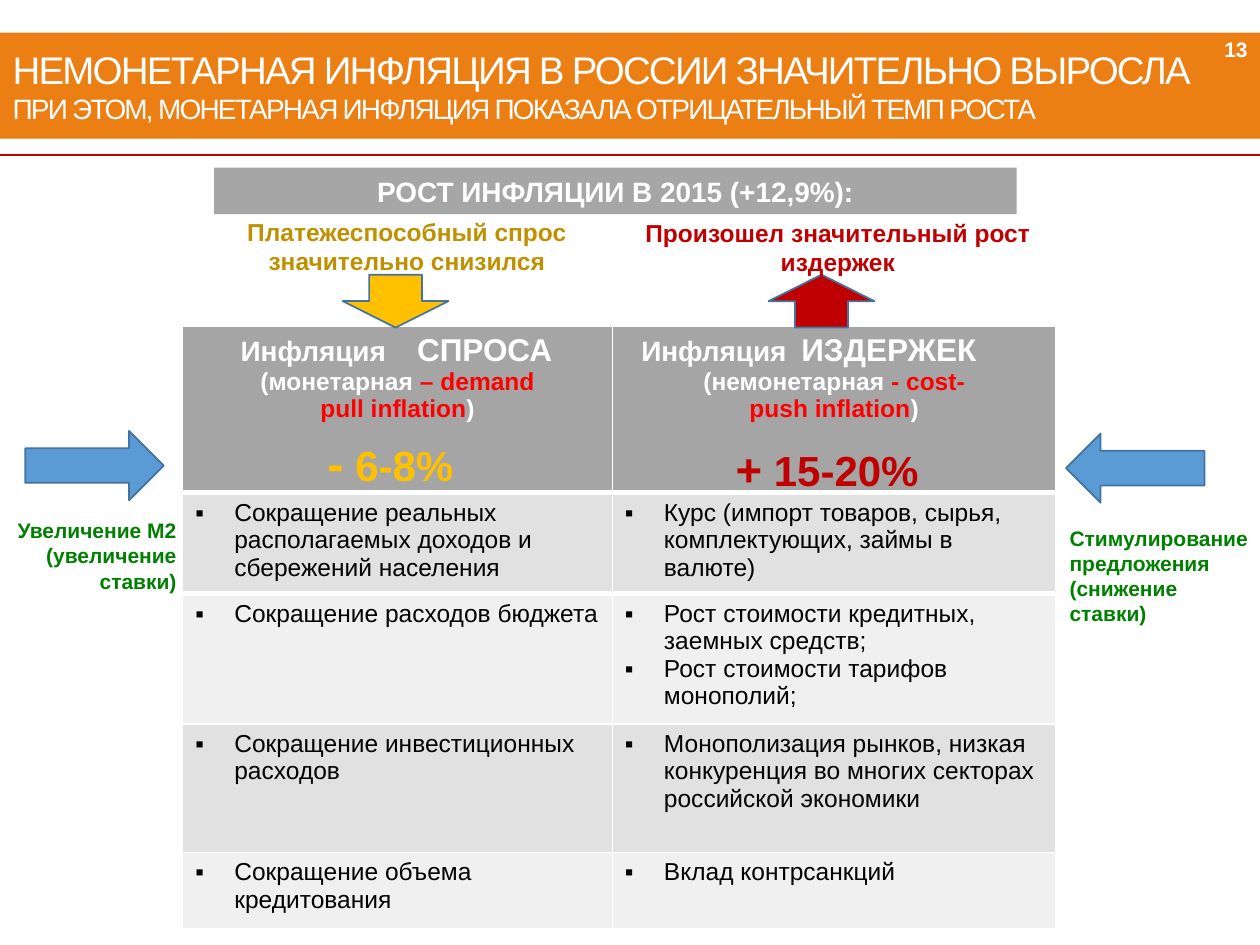
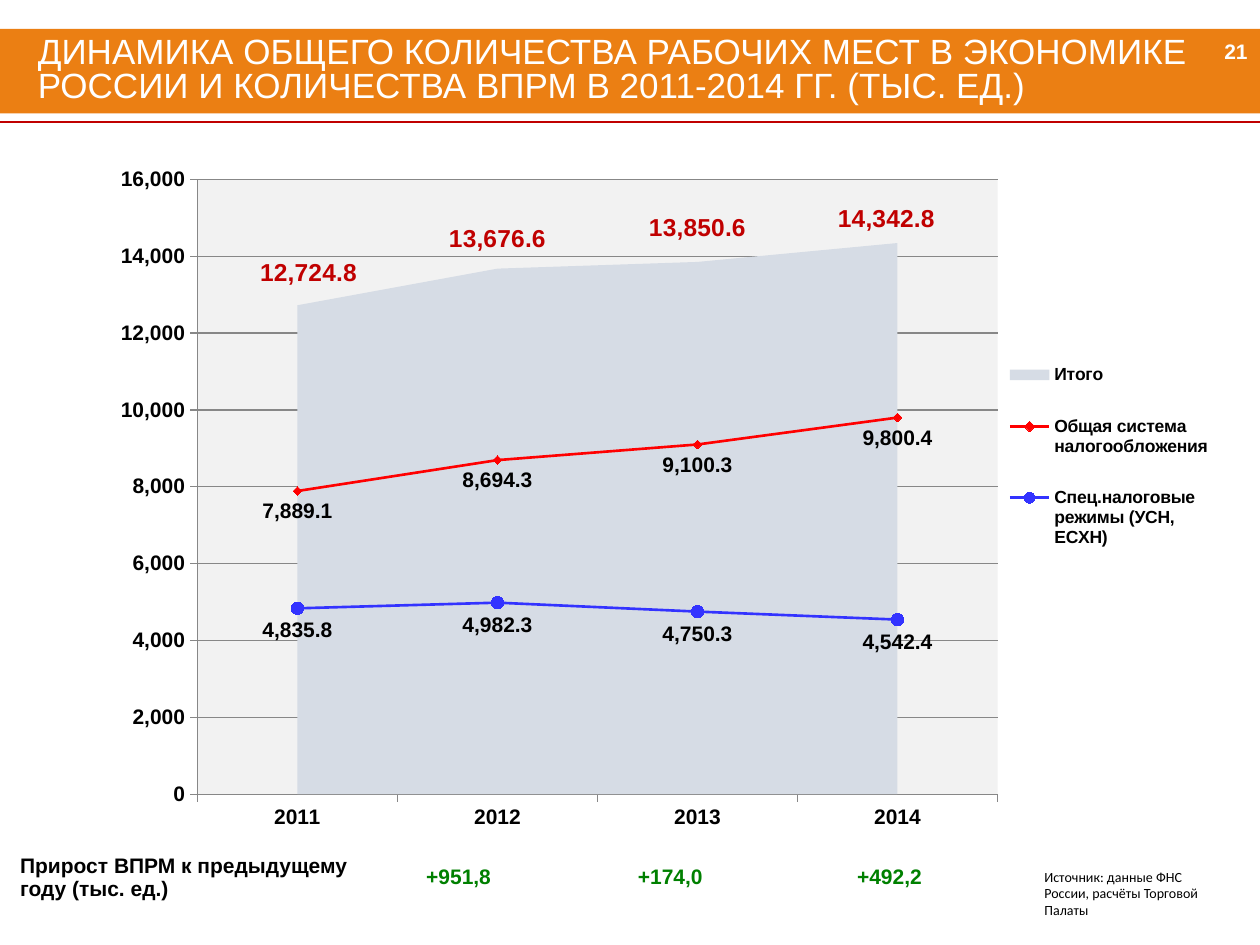
from dataclasses import dataclass

from lxml import etree
from pptx import Presentation
from pptx.chart.data import CategoryChartData
from pptx.dml.color import RGBColor
from pptx.enum.chart import XL_CHART_TYPE, XL_LABEL_POSITION, XL_LEGEND_POSITION, XL_MARKER_STYLE
from pptx.enum.shapes import MSO_CONNECTOR, MSO_SHAPE
from pptx.enum.text import MSO_ANCHOR, MSO_AUTO_SIZE, PP_ALIGN
from pptx.oxml.ns import qn
from pptx.util import Inches, Pt

LEFT, CENTER, RIGHT = PP_ALIGN.LEFT, PP_ALIGN.CENTER, PP_ALIGN.RIGHT
TOP, MIDDLE = MSO_ANCHOR.TOP, MSO_ANCHOR.MIDDLE
DOWN, ACROSS = MSO_SHAPE.DOWN_ARROW, MSO_SHAPE.RIGHT_ARROW
DIAMOND, CIRCLE = XL_MARKER_STYLE.DIAMOND, XL_MARKER_STYLE.CIRCLE


@dataclass(frozen=True)
class Theme:
    font: str = "Arial"
    source_font: str = "Calibri"
    orange: str = "EB7F13"
    white: str = "FFFFFF"
    black: str = "000000"
    dark_red: str = "C00000"
    red: str = "FF0000"
    yellow: str = "FFC000"
    gold: str = "BF9000"
    green: str = "008000"
    blue: str = "5B9BD5"
    outline: str = "43739E"
    banner: str = "A6A6A6"
    header: str = "A5A5A5"
    stripes: tuple = ("E1E1E1", "F0F0F0")
    area: str = "D6DCE5"
    line_blue: str = "3333FF"
    plot: str = "F2F2F2"
    grid: str = "878787"
    small: int = 8
    legend: int = 10
    note: int = 12
    body: int = 14
    heading: int = 16
    strong: int = 18
    figure: int = 24


THEME = Theme()

# Slide 1 content
INFLATION_TITLE = [("НЕМОНЕТАРНАЯ ИНФЛЯЦИЯ В РОССИИ ЗНАЧИТЕЛЬНО ВЫРОСЛА", 22),
                   ("ПРИ ЭТОМ, МОНЕТАРНАЯ ИНФЛЯЦИЯ ПОКАЗАЛА ОТРИЦАТЕЛЬНЫЙ ТЕМП РОСТА", 16)]
BANNER = "РОСТ ИНФЛЯЦИИ В 2015 (+12,9%):"
# kind of inflation, tab stops, opening of the second line, English term
HEADERS = [("СПРОСА", (0.36, 1.76), "(монетарная ", "– demand pull\u00a0inflation"),
           ("ИЗДЕРЖЕК", (0.13, 1.4), "(немонетарная ", "- cost-push\u00a0inflation")]
CAUSES = [
    (["Сокращение реальных располагаемых доходов и сбережений населения"],
     ["Курс (импорт товаров, сырья, комплектующих, займы в валюте)"]),
    (["Сокращение расходов бюджета"],
     ["Рост стоимости кредитных, заемных средств;", "Рост стоимости тарифов монополий;"]),
    (["Сокращение инвестиционных расходов"],
     ["Монополизация рынков, низкая конкуренция во многих секторах российской экономики"]),
    (["Сокращение объема кредитования"], ["Вклад контрсанкций"]),
]
CAUSE_COLUMNS, CAUSE_ROWS = (3.41, 3.52), (1.32, 0.79, 0.93, 1.02, 0.61)
# box, alignment, paragraphs of (text, size, colour) spans
LABELS = [
    ((1.7, 1.67, 3.06, 0.57), CENTER,
     [[("Платежеспособный спрос значительно снизился", THEME.body, THEME.gold)]]),
    ((4.92, 1.68, 3.46, 0.81), CENTER,
     [[("Произошел значительный рост издержек", THEME.body, THEME.dark_red)]]),
    ((2.5, 3.38, 1.46, 0.57), LEFT,
     [[("-", 28, THEME.yellow), (" 6-8%", THEME.figure, THEME.yellow)]]),
    ((5.74, 3.45, 1.83, 0.54), LEFT,
     [[("+", 26, THEME.dark_red), (" 15-20%", THEME.figure, THEME.dark_red)]]),
    ((0, 4.06, 1.5, 0.71), RIGHT,
     [[("Увеличение М2", THEME.note, THEME.green)],
      [("(увеличение ставки)", THEME.note, THEME.green)]]),
    ((8.39, 4.12, 1.65, 0.91), LEFT,
     [[("Стимулирование предложения", THEME.note, THEME.green)],
      [("(снижение ставки)", THEME.note, THEME.green)]]),
]
ARROWS = [
    (DOWN, (2.72, 2.18, 0.84, 0.42), 0, THEME.yellow),
    (DOWN, (6.1, 2.18, 0.84, 0.42), 180, THEME.dark_red),
    (ACROSS, (0.2, 3.42, 1.1, 0.55), 0, THEME.blue),
    (ACROSS, (8.46, 3.44, 1.1, 0.55), 180, THEME.blue),
]

# Slide 2 content
JOBS_TITLE = [("ДИНАМИКА ОБЩЕГО КОЛИЧЕСТВА РАБОЧИХ МЕСТ В ЭКОНОМИКЕ РОССИИ И КОЛИЧЕСТВА "
               "ВПРМ В 2011-2014 ГГ. (ТЫС. ЕД.)", 20)]
YEARS = ["2011", "2012", "2013", "2014"]
JOBS = {
    "Итого": (12724.8, 13676.6, 13850.6, 14342.8),
    "Общая система налогообложения": (7889.1, 8694.3, 9100.3, 9800.4),
    "Спец.налоговые режимы (УСН, ЕСХН)": (4835.8, 4982.3, 4750.3, 4542.4),
}
# Shifts from the middle of the area to just above its edge
TOTAL_LABEL_SHIFTS = [(0.01, -0.36), (0, -0.38), (0, -0.39), (-0.01, -0.39)]
LINE_STYLES = [(THEME.red, DIAMOND, 5), (THEME.line_blue, CIRCLE, 7)]
GROWTH = ["Прирост ВПРМ к предыдущему году (тыс. ед.)", "+951,8", "+174,0", "+492,2"]
GROWTH_COLUMNS = (2.74, 1.5, 1.86, 1.62)
SOURCE = "Источник: данные ФНС России, расчёты Торговой Палаты"


# Shared helpers
def inches(values):
    return [Inches(value) for value in values]


def paint(fill, color):
    fill.solid()
    fill.fore_color.rgb = RGBColor.from_string(color)


def add_solid_fill(parent, color):
    fill = etree.SubElement(parent, qn("a:solidFill"))
    etree.SubElement(fill, qn("a:srgbClr"), val=color)


def style_font(font, size, color=THEME.black, bold=True, name=THEME.font):
    font.size, font.bold, font.name = Pt(size), bold, name
    font.color.rgb = RGBColor.from_string(color)


def write(frame, paragraphs, align=LEFT, bold=True, name=THEME.font):
    """Fill a frame with paragraphs, each a list of (text, size, colour) spans."""
    frame.text = "\n".join("" for _ in paragraphs)
    for para, spans in zip(frame.paragraphs, paragraphs):
        para.alignment = align
        for text, size, color in spans:
            span = para.add_run()
            span.text = text
            style_font(span.font, size, color, bold, name)


def add_label(page, place, paragraphs, align=LEFT, anchor=TOP, **style):
    frame = page.shapes.add_textbox(*inches(place)).text_frame
    frame.word_wrap, frame.vertical_anchor = True, anchor
    write(frame, paragraphs, align, **style)


def add_block(page, kind, place, color, outline=None):
    block = page.shapes.add_shape(kind, *inches(place))
    block.shadow.inherit = False
    paint(block.fill, color)
    if outline:
        block.line.color.rgb = RGBColor.from_string(outline)
        block.line.width = Pt(1)
    else:
        block.line.fill.background()
    return block


def add_grid(page, place, columns, rows):
    left, top = place
    shape = page.shapes.add_table(len(rows), len(columns),
                                  *inches((left, top, sum(columns), sum(rows))))
    for column, width in zip(shape.table.columns, columns):
        column.width = Inches(width)
    for row, height in zip(shape.table.rows, rows):
        row.height = Inches(height)
    return shape.table


def add_page(deck, title, band, rule_y, number, number_y, margin):
    """Title-only slide with the orange band, red rule and slide number."""
    page = deck.slides.add_slide(deck.slide_layouts[5])
    box = page.shapes.title
    box.left, box.top, box.width, box.height = inches((0, band[0], 10, band[1]))
    paint(box.fill, THEME.orange)
    frame = box.text_frame
    frame.auto_size, frame.vertical_anchor = MSO_AUTO_SIZE.NONE, MIDDLE
    frame.word_wrap = True
    frame.margin_left, frame.margin_top, frame.margin_bottom = inches((margin, 0, 0))
    write(frame, [[(text, size, THEME.white)] for text, size in title], bold=False)

    rule = page.shapes.add_connector(MSO_CONNECTOR.STRAIGHT, *inches((0, rule_y, 10, rule_y)))
    rule.line.color.rgb = RGBColor.from_string(THEME.dark_red)
    rule.line.width = Pt(1.5)
    etree.SubElement(rule._element.spPr, qn("a:effectLst"))
    add_label(page, (9.12, number_y, 0.88, 0.36), [[(number, THEME.note, THEME.white)]],
              RIGHT, MIDDLE)
    return page


# Slide 1
def set_tabs(para, stops):
    tabs = etree.SubElement(para._p.get_or_add_pPr(), qn("a:tabLst"))
    for stop in stops:
        etree.SubElement(tabs, qn("a:tab"), pos=str(Inches(stop)), algn="l")


def set_bullet(para):
    properties = para._p.get_or_add_pPr()
    properties.set("marL", str(Inches(0.31)))
    properties.set("indent", str(-Inches(0.31)))
    etree.SubElement(properties, qn("a:buFont"), typeface=THEME.font)
    etree.SubElement(properties, qn("a:buChar"), char="▪")


def set_border(cell, side, width):
    properties = cell._tc.get_or_add_tcPr()
    border = properties.makeelement(qn("a:" + side), {"w": str(Pt(width))})
    add_solid_fill(border, THEME.white)
    properties.insert(0, border)


def build_inflation(deck):
    page = add_page(deck, INFLATION_TITLE, (0.26, 0.84), 1.23, "13", 0.21, 0.1)
    for para in page.shapes.title.text_frame.paragraphs:
        for span in para.runs:
            span.font._element.set("spc", "-100")

    banner = add_block(page, MSO_SHAPE.RECTANGLE, (1.7, 1.33, 6.37, 0.37), THEME.banner)
    write(banner.text_frame, [[(BANNER, THEME.heading, THEME.white)]], CENTER)

    # Table of causes
    table = add_grid(page, (1.45, 2.59), CAUSE_COLUMNS, CAUSE_ROWS)
    for column, (kind, stops, opening, term) in enumerate(HEADERS):
        cell = table.cell(0, column)
        paint(cell.fill, THEME.header)
        set_border(cell, "lnB", 3)
        set_border(table.cell(1, column), "lnT", 3)
        write(cell.text_frame, [
            [("\tИнфляция\t", THEME.heading, THEME.white), (kind, THEME.strong, THEME.white)],
            [(opening, THEME.body, THEME.white), (term, THEME.body, THEME.red),
             (")", THEME.body, THEME.white)]])
        first, second = cell.text_frame.paragraphs
        set_tabs(first, stops)
        second.alignment = CENTER
    for row, pair in enumerate(CAUSES):
        for column, causes in enumerate(pair):
            cell = table.cell(row + 1, column)
            paint(cell.fill, THEME.stripes[row % 2])
            write(cell.text_frame, [[(cause, THEME.body, THEME.black)] for cause in causes],
                  bold=False)
            for para in cell.text_frame.paragraphs:
                set_bullet(para)

    # Arrows and labels around the table
    for kind, place, turn, color in ARROWS:
        add_block(page, kind, place, color, THEME.outline).rotation = turn
    for place, align, paragraphs in LABELS:
        add_label(page, place, paragraphs, align)


# Slide 2
def set_layout(parent, index, x, y, size=None, inner=False):
    """Put a manual layout into a chart element at the given child index."""
    for old in parent.findall(qn("c:layout")):
        parent.remove(old)
    layout = etree.Element(qn("c:layout"))
    manual = etree.SubElement(layout, qn("c:manualLayout"))
    values = [("layoutTarget", "inner")] if inner else []
    if size:
        values += [("xMode", "edge"), ("yMode", "edge")]
    values += [("x", x), ("y", y)]
    if size:
        values += [("w", size[0]), ("h", size[1])]
    for tag, value in values:
        etree.SubElement(manual, qn("c:" + tag), val=str(value))
    parent.insert(index, layout)


def move_first_to_area(plot_area):
    """Turn the first line series into an area drawn behind the lines."""
    lines = plot_area.find(qn("c:lineChart"))
    total = lines.find(qn("c:ser"))
    for tag in ("c:marker", "c:smooth"):
        for child in total.findall(qn(tag)):
            total.remove(child)
    area = plot_area.makeelement(qn("c:areaChart"))
    lines.addprevious(area)
    etree.SubElement(area, qn("c:grouping"), val="standard")
    etree.SubElement(area, qn("c:varyColors"), val="0")
    area.append(total)
    for axis in lines.findall(qn("c:axId")):
        etree.SubElement(area, qn("c:axId"), val=axis.get("val"))


def center_categories(value_axis):
    """Place each category in the middle of its interval."""
    for old in value_axis.findall(qn("c:crossBetween")):
        value_axis.remove(old)
    between = value_axis.makeelement(qn("c:crossBetween"), {"val": "between"})
    value_axis.find(qn("c:crosses")).addnext(between)


def add_jobs_chart(page):
    data = CategoryChartData(number_format="#,##0.0")
    data.categories = YEARS
    for name, values in JOBS.items():
        data.add_series(name, values)
    chart = page.shapes.add_chart(XL_CHART_TYPE.LINE_MARKERS,
                                  *inches((0.95, 1.18, 8.82, 6.1)), data).chart
    chart.has_title = False
    style_font(chart.font, THEME.legend)
    plot_area = chart._chartSpace.chart.plotArea
    move_first_to_area(plot_area)
    set_layout(plot_area, 0, 0.07, 0.04, (0.72, 0.8), inner=True)
    add_solid_fill(etree.SubElement(plot_area, qn("c:spPr")), THEME.plot)

    # Axes and legend
    scale = chart.value_axis
    for axis in (chart.category_axis, scale):
        style_font(axis.tick_labels.font, THEME.note)
        axis.format.line.color.rgb = RGBColor.from_string(THEME.grid)
    scale.minimum_scale, scale.maximum_scale, scale.major_unit = 0, 16000, 2000
    scale.tick_labels.number_format = "#,##0"
    scale.tick_labels.number_format_is_linked = False
    scale.has_major_gridlines = True
    scale.major_gridlines.format.line.color.rgb = RGBColor.from_string(THEME.grid)
    center_categories(scale._element)
    chart.has_legend = True
    chart.legend.position = XL_LEGEND_POSITION.RIGHT
    chart.legend.include_in_layout = False
    style_font(chart.legend.font, THEME.legend)
    set_layout(chart.legend._element, 1, 0.79, 0.24, (0.2, 0.32))

    # Series
    area_plot, line_plot = chart.plots
    total = area_plot.series[0]
    paint(total.format.fill, THEME.area)
    for index in range(len(YEARS)):
        style_font(total.points[index].data_label.font, THEME.body, THEME.dark_red)
    for label, (x, y) in zip(total._element.iter(qn("c:dLbl")), TOTAL_LABEL_SHIFTS):
        set_layout(label, 1, x, y)
    style_font(total.data_labels.font, THEME.body, THEME.dark_red)
    total.data_labels.show_value = True
    for leader in total._element.iter(qn("c:showLeaderLines")):
        leader.set("val", "0")
    for series, (color, marker, size) in zip(line_plot.series, LINE_STYLES):
        series.smooth = False
        series.format.line.color.rgb = RGBColor.from_string(color)
        series.format.line.width = Pt(1.5)
        series.marker.style, series.marker.size = marker, size
        paint(series.marker.format.fill, color)
        series.marker.format.line.color.rgb = RGBColor.from_string(color)
        series.data_labels.show_value = True
        series.data_labels.position = XL_LABEL_POSITION.BELOW
        style_font(series.data_labels.font, THEME.note)


def build_jobs(deck):
    page = add_page(deck, JOBS_TITLE, (0.23, 0.67), 0.97, "21", 0.23, 0.3)
    page.shapes.title.text_frame.paragraphs[0].line_spacing = 0.8
    add_jobs_chart(page)

    # Yearly growth row and source
    table = add_grid(page, (0.15, 6.66), GROWTH_COLUMNS, (0.6,))
    for column, text in enumerate(GROWTH):
        cell = table.cell(0, column)
        paint(cell.fill, THEME.white)
        cell.vertical_anchor = MIDDLE
        cell.margin_left = cell.margin_right = cell.margin_top = Inches(0.01)
        cell.margin_bottom = 0
        color, align = (THEME.green, CENTER) if column else (THEME.black, LEFT)
        write(cell.text_frame, [[(text, THEME.note, color)]], align)
    add_label(page, (8.19, 6.84, 1.54, 0.5), [[(SOURCE, THEME.small, THEME.black)]],
              bold=False, name=THEME.source_font)


def main():
    deck = Presentation()
    deck.slide_width, deck.slide_height = Inches(10), Inches(7.5)
    build_inflation(deck)
    build_jobs(deck)
    deck.save("out.pptx")


if __name__ == "__main__":
    main()
